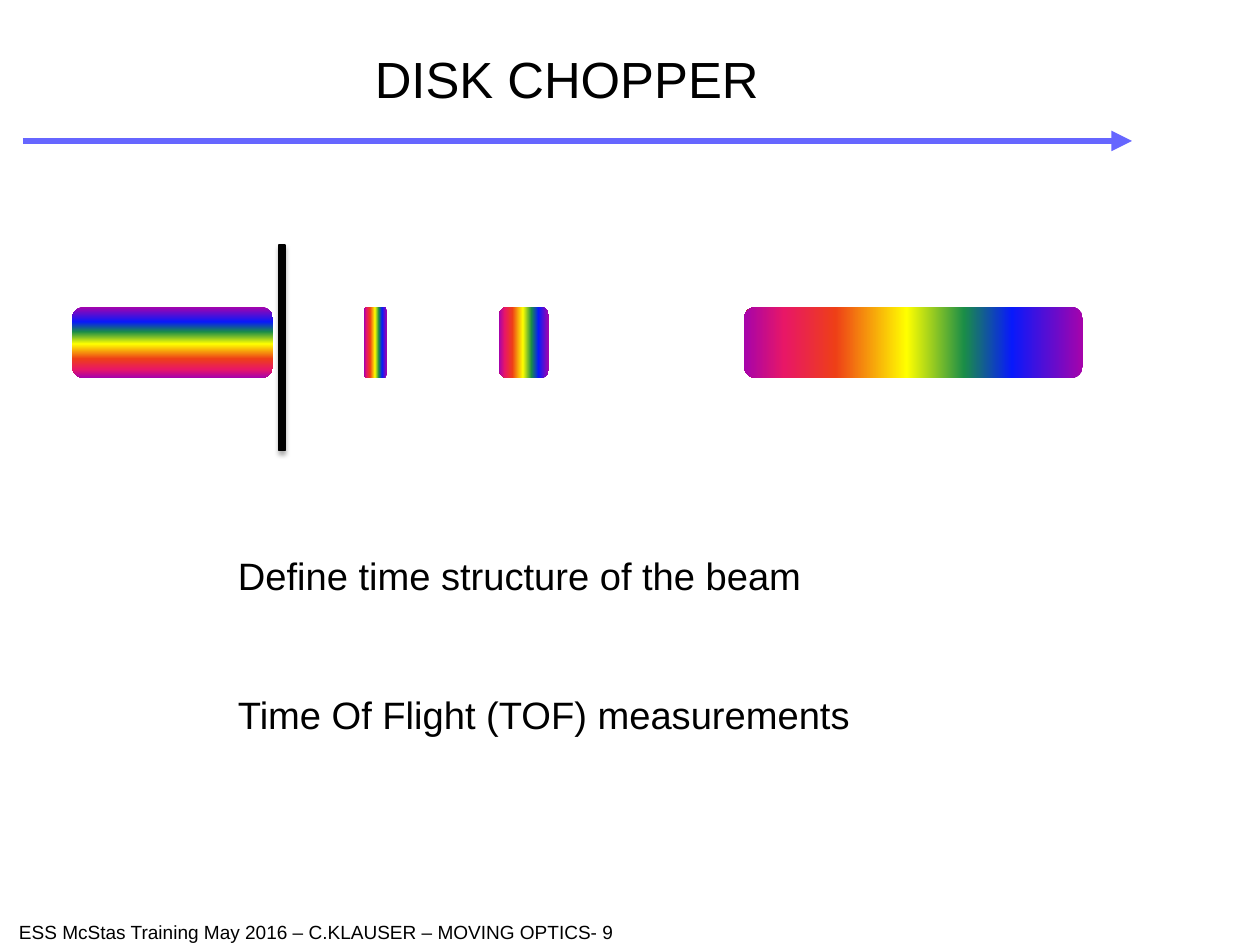
"""Build the disk chopper slide."""
from lxml import etree
from pptx import Presentation
from pptx.dml.color import RGBColor
from pptx.enum.shapes import MSO_CONNECTOR, MSO_SHAPE
from pptx.enum.text import MSO_ANCHOR, PP_ALIGN
from pptx.oxml.ns import qn
from pptx.util import Pt

PX = 8000
LEFT, CENTER = PP_ALIGN.LEFT, PP_ALIGN.CENTER
TOP, MIDDLE = MSO_ANCHOR.TOP, MSO_ANCHOR.MIDDLE
ROUND, RECT = MSO_SHAPE.ROUNDED_RECTANGLE, MSO_SHAPE.RECTANGLE
STRAIGHT = MSO_CONNECTOR.STRAIGHT


def color(code):
    return RGBColor.from_string(code)


def add(parent, tag, **attrs):
    return etree.SubElement(parent, qn(tag), attrs)


deck = Presentation()
deck.slide_width, deck.slide_height = 1260 * PX, 945 * PX
slide = deck.slides.add_slide(deck.slide_layouts[6])
shapes = slide.shapes

arrow = shapes.add_connector(STRAIGHT, 23 * PX, 141 * PX, 1132 * PX, 141 * PX)
arrow.line.color.rgb = color("6666FF")
arrow.line.width = Pt(4.31)
add(arrow.line._ln, "a:tailEnd", type="triangle")
add(arrow._element.spPr, "a:effectLst")

spectrum = [(0, "A603AB"), (21, "0819FB"), (35, "1A8D48"), (52, "FFFF00"),
            (73, "EE3F17"), (88, "E81766"), (100, "A603AB")]
for left, width, angle in [(72, 201, 270), (744, 339, 180),
                           (364, 23, 180), (499, 50, 180)]:
    beam = shapes.add_shape(ROUND, left * PX, 307 * PX, width * PX, 71 * PX)
    beam.shadow.inherit = False
    beam.line.fill.background()
    beam.fill.gradient()
    beam.fill.gradient_angle = angle
    stops = beam._element.spPr.find(".//" + qn("a:gsLst"))
    stops.clear()
    for part, code in spectrum:
        stop = add(stops, "a:gs", pos=str(part * 1000))
        add(stop, "a:srgbClr", val=code)

disk = shapes.add_shape(RECT, 279 * PX, 245 * PX, 6 * PX, 206 * PX)
disk.shadow.inherit = False
disk.fill.solid()
disk.fill.fore_color.rgb = color("000000")
disk.line.color.rgb = color("000000")
disk.line.width = Pt(0.75)
effect = disk._element.spPr.find(qn("a:effectLst"))
shade = add(effect, "a:outerShdw", blurRad=str(Pt(3.1)), dist=str(Pt(1.8)),
            dir="5400000", rotWithShape="0")
black = add(shade, "a:srgbClr", val="000000")
add(black, "a:alpha", val="35000")

texts = [
    ((8, 914, 914, 31), (11, 6), 12, LEFT, TOP,
     ["ESS McStas Training May 2016 – C.KLAUSER – MOVING OPTICS- 9"]),
    ((0, 24, 1134, 99), (0, 9), 32, CENTER, MIDDLE, ["DISK CHOPPER"]),
    ((227, 542, 641, 197), (11, 10), 24, LEFT, TOP,
     ["Define time structure of the beam",
      "Time Of Flight (TOF) measurements"]),
]
for place, (side, head), size, align, anchor, lines in texts:
    frame = shapes.add_textbox(*[n * PX for n in place]).text_frame
    style = {"word_wrap": True, "vertical_anchor": anchor,
             "margin_left": side * PX, "margin_right": side * PX,
             "margin_top": head * PX, "margin_bottom": 0}
    for name, value in style.items():
        setattr(frame, name, value)
    frame.text = "\n".join(lines)
    for row, para in enumerate(frame.paragraphs):
        para.alignment = align
        if row:
            para.space_before = Pt(59)
        font = para.runs[0].font
        font.name, font.size = "Arial", Pt(size)
        font.color.rgb = color("000000")

deck.save("out.pptx")
